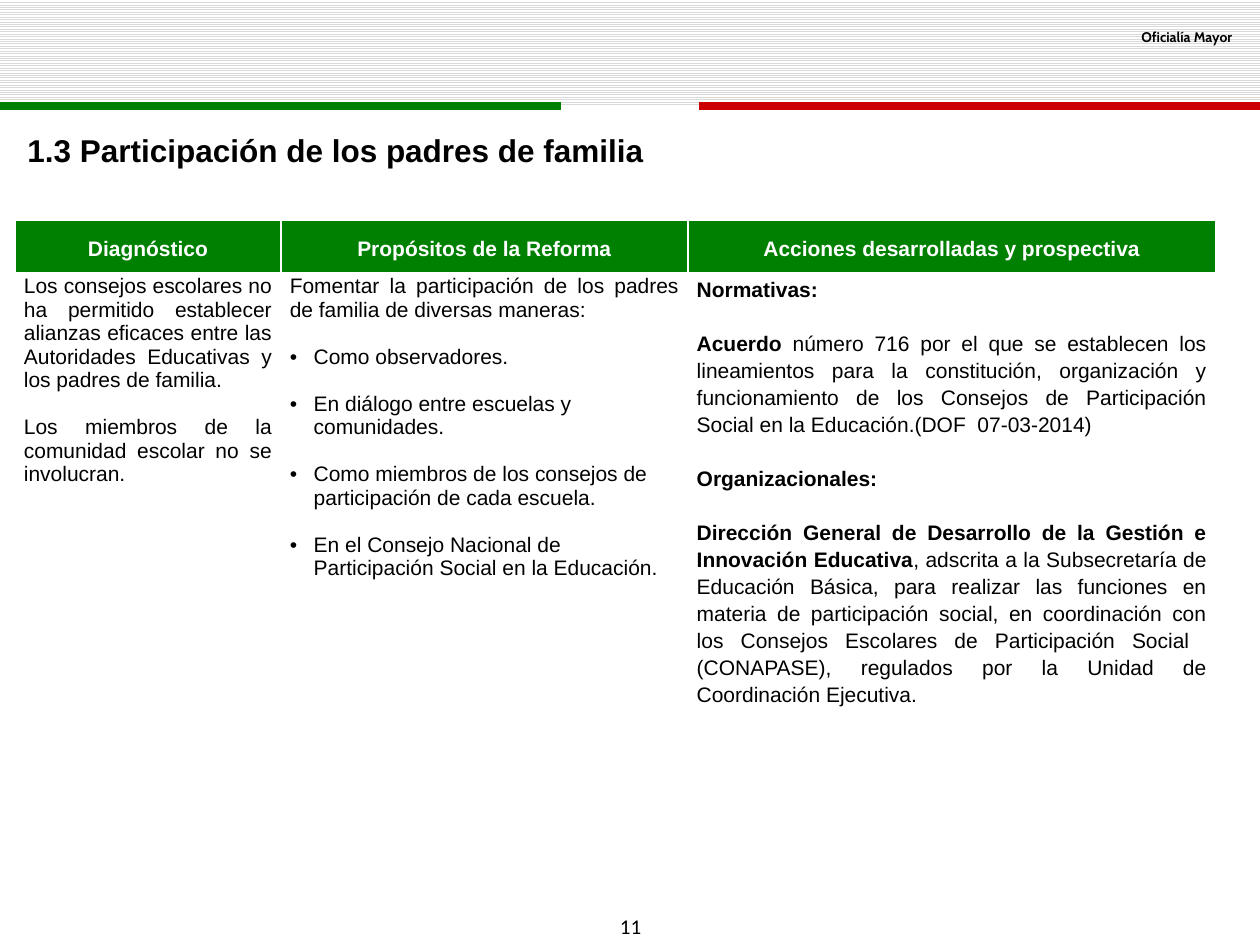
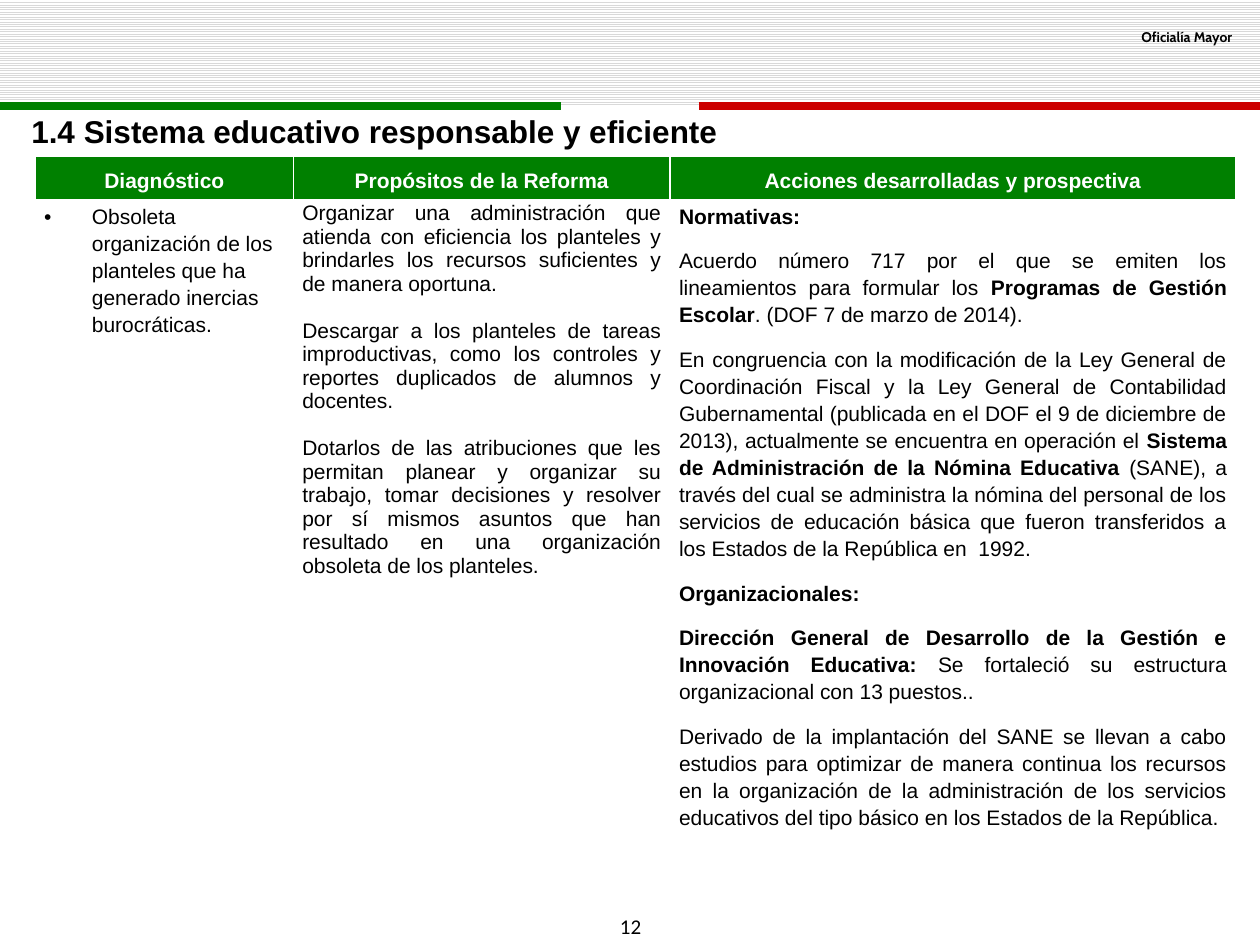
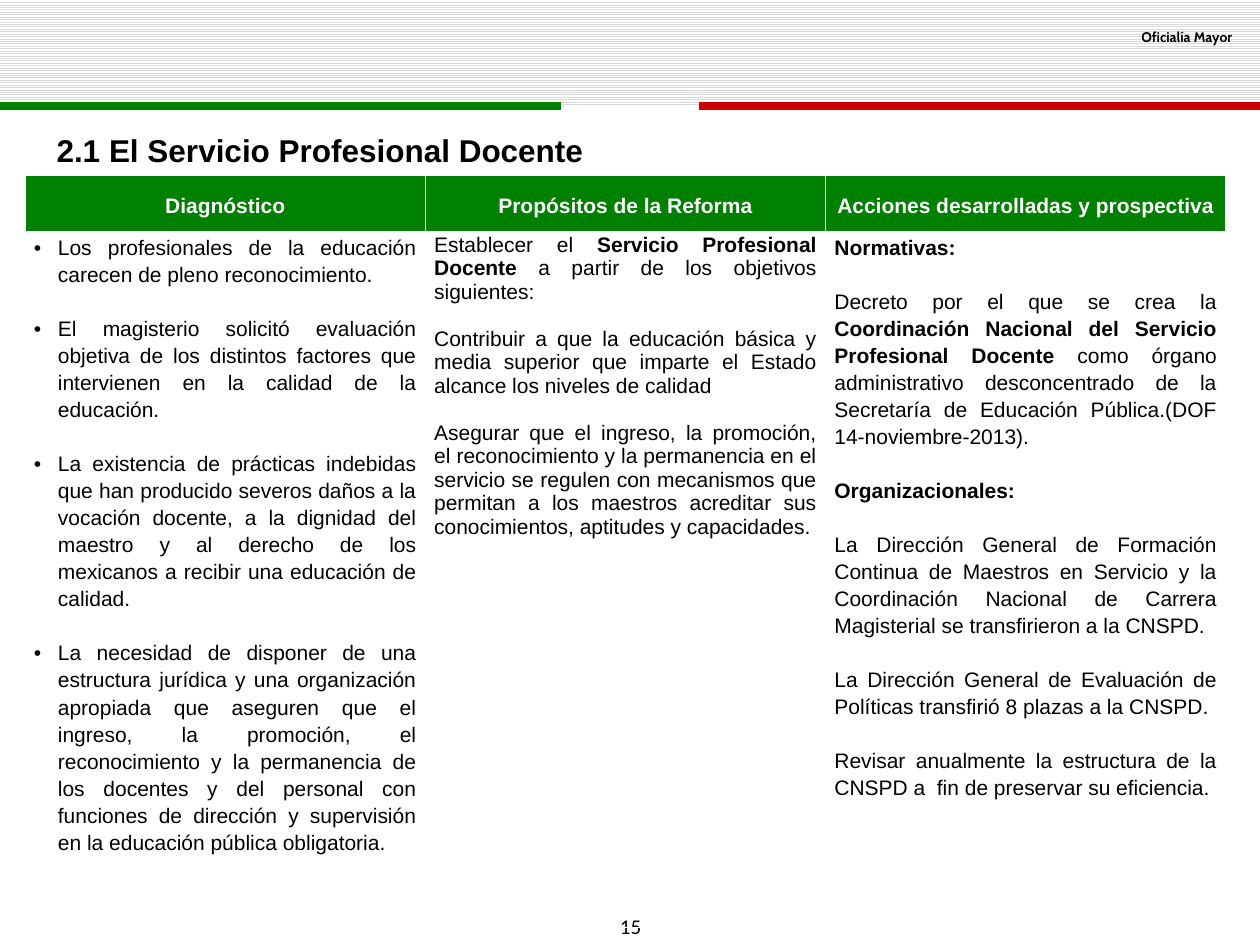
from lxml.etree import SubElement
from pptx import Presentation
from pptx.dml.color import RGBColor
from pptx.enum.dml import MSO_PATTERN
from pptx.enum.shapes import MSO_CONNECTOR, MSO_SHAPE
from pptx.enum.text import MSO_ANCHOR, MSO_AUTO_SIZE, PP_ALIGN
from pptx.oxml.ns import qn
from pptx.util import Inches, Pt

GREEN = RGBColor(0x00, 0x80, 0x00)
RED = RGBColor(0xCC, 0x00, 0x00)
GRAY = RGBColor(0xD9, 0xD9, 0xD9)
WHITE = RGBColor(0xFF, 0xFF, 0xFF)
BLACK = RGBColor(0x00, 0x00, 0x00)

SLIDE_WIDTH, SLIDE_HEIGHT = 10, 7.5
BAND_HEIGHT = 0.84
STRIPE_WIDTH = 4.45
TABLE_WIDTH = 9.53
CELL_MARGIN = 0.07
WIDE = 1.15  # line spacing of the looser columns
LINE = 13.4  # points taken by one single-spaced line of body text

HEADINGS = ["Diagnóstico", "Propósitos de la Reforma", "Acciones desarrolladas y prospectiva"]

# Body text: "• " starts a bulleted paragraph and ** encloses bold words.
# Each column gives its line spacing and paragraphs, and any exceptions:
# "gap" in points between paragraphs, "bullet_align" for its bullets.
SLIDES = [
    {
        "number": 11,
        "title": "1.3 Participación de los padres de familia",
        "title_box": (0.12, 0.99, 7.56),
        "table_at": (0.12, 1.75),
        "column_shares": (2.11, 3.23, 4.19),
        "row_heights": (0.43, 4.12),
        "indent": 0.19,
        "columns": [
            {"spacing": 1, "paragraphs": [
                "Los consejos escolares no ha permitido establecer alianzas eficaces entre las "
                "Autoridades Educativas y los padres de familia.",
                "Los miembros de la comunidad escolar no se involucran.",
            ]},
            {"spacing": 1, "paragraphs": [
                "Fomentar la participación de los padres de familia de diversas maneras:",
                "• Como observadores.",
                "• En diálogo entre escuelas y comunidades.",
                "• Como miembros de los consejos de participación de cada escuela.",
                "• En el Consejo Nacional de Participación Social en la Educación.",
            ]},
            {"spacing": WIDE, "paragraphs": [
                "**Normativas:**",
                "**Acuerdo** número 716 por el que se establecen los lineamientos para la "
                "constitución, organización y funcionamiento de los Consejos de Participación "
                "Social en la Educación.(DOF  07-03-2014)",
                "**Organizacionales:**",
                "**Dirección General de Desarrollo de la Gestión e Innovación Educativa**, "
                "adscrita a la Subsecretaría de Educación Básica, para realizar las funciones en "
                "materia de participación social, en coordinación con los Consejos Escolares de "
                "Participación Social  (CONAPASE), regulados por la Unidad de Coordinación "
                "Ejecutiva.",
            ]},
        ],
    },
    {
        "number": 12,
        "title": "1.4 Sistema educativo responsable y eficiente",
        "title_box": (0.15, 0.84, 5.7),
        "table_at": (0.28, 1.24),
        "column_shares": (2.05, 2.99, 4.49),
        "row_heights": (0.36, 5.28),
        "indent": 0.38,
        "columns": [
            {"spacing": WIDE, "paragraphs": [
                "• Obsoleta organización de los planteles que ha generado inercias burocráticas.",
            ]},
            {"spacing": 1, "paragraphs": [
                "Organizar una administración que atienda con eficiencia los planteles y "
                "brindarles los recursos suficientes y de manera oportuna.",
                "Descargar a los planteles de tareas improductivas, como los controles y reportes "
                "duplicados de alumnos y docentes.",
                "Dotarlos de las atribuciones que les permitan planear y organizar su trabajo, "
                "tomar decisiones y resolver por sí mismos asuntos que han resultado en una "
                "organización obsoleta de los planteles.",
            ]},
            {"spacing": WIDE, "gap": 10, "paragraphs": [
                "**Normativas:**",
                "Acuerdo número 717 por el que se emiten los lineamientos para formular los "
                "**Programas de Gestión Escolar**. (DOF 7 de marzo de 2014).",
                "En congruencia con la modificación de la Ley General de Coordinación Fiscal y la "
                "Ley General de Contabilidad Gubernamental (publicada en el DOF el 9 de diciembre "
                "de 2013), actualmente se encuentra en operación el **Sistema de Administración "
                "de la Nómina Educativa** (SANE), a través del cual se administra la nómina del "
                "personal de los servicios de educación básica que fueron transferidos a los "
                "Estados de la República en  1992.",
                "**Organizacionales:**",
                "**Dirección General de Desarrollo de la Gestión e Innovación Educativa: **"
                "Se fortaleció su estructura organizacional con 13 puestos..",
                "Derivado de la implantación del SANE se llevan a cabo estudios para optimizar de "
                "manera continua los recursos en la organización de la administración de los "
                "servicios educativos del tipo básico en los Estados de la República.",
            ]},
        ],
    },
    {
        "number": 15,
        "title": "2.1 El Servicio Profesional Docente",
        "title_box": (0.35, 0.99, 4.42),
        "table_at": (0.2, 1.39),
        "column_shares": (1, 1, 1),
        "row_heights": (0.46, 5.51),
        "indent": 0.19,
        "columns": [
            {"spacing": WIDE, "bullet_align": PP_ALIGN.JUSTIFY, "paragraphs": [
                "• Los profesionales de la educación carecen de pleno reconocimiento.",
                "• El magisterio solicitó evaluación objetiva de los distintos factores que "
                "intervienen en la calidad de la educación.",
                "• La existencia de prácticas indebidas que han producido severos daños a la "
                "vocación docente, a la dignidad del maestro y al derecho de los mexicanos a "
                "recibir una educación de calidad.",
                "• La necesidad de disponer de una estructura jurídica y una organización "
                "apropiada que aseguren que el ingreso, la promoción, el reconocimiento y la "
                "permanencia de los docentes y del personal con funciones de dirección y "
                "supervisión en la educación pública obligatoria.",
            ]},
            {"spacing": 1, "paragraphs": [
                "Establecer el **Servicio Profesional Docente** a partir de los objetivos "
                "siguientes:",
                "Contribuir a que la educación básica y media superior que imparte el Estado "
                "alcance los niveles de calidad",
                "Asegurar que el ingreso, la promoción, el reconocimiento y la permanencia en el "
                "servicio se regulen con mecanismos que permitan a los maestros acreditar sus "
                "conocimientos, aptitudes y capacidades.",
            ]},
            {"spacing": WIDE, "paragraphs": [
                "**Normativas:**",
                "Decreto por el que se crea la **Coordinación Nacional del Servicio Profesional "
                "Docente** como órgano administrativo desconcentrado de la Secretaría de "
                "Educación Pública.(DOF 14-noviembre-2013).",
                "**Organizacionales:**",
                "La Dirección General de Formación Continua de Maestros en Servicio y la "
                "Coordinación Nacional de Carrera Magisterial se transfirieron a la CNSPD.",
                "La Dirección General de Evaluación de Políticas transfirió 8 plazas a la CNSPD.",
                "Revisar anualmente la estructura de la CNSPD a  fin de preservar su eficiencia.",
            ]},
        ],
    },
]


# Text helpers
def format_run(run, size, color=BLACK, bold=False, name="Arial"):
    run.font.name = name
    run.font.size = Pt(size)
    run.font.bold = bold
    run.font.color.rgb = color


def add_label(slide, box, text, size, align=PP_ALIGN.LEFT, bold=True, name="Arial"):
    shape = slide.shapes.add_textbox(*[Inches(length) for length in box])
    text_frame = shape.text_frame
    text_frame.word_wrap = True
    text_frame.auto_size = MSO_AUTO_SIZE.SHAPE_TO_FIT_TEXT
    text_frame.text = text
    paragraph = text_frame.paragraphs[0]
    paragraph.alignment = align
    format_run(paragraph.runs[0], size, bold=bold, name=name)
    return shape


def add_bullet(paragraph, indent):
    properties = paragraph._p.get_or_add_pPr()
    properties.set("marL", str(Inches(indent)))
    properties.set("indent", str(-Inches(indent)))
    SubElement(properties, qn("a:buFont"), typeface="Arial")
    SubElement(properties, qn("a:buChar"), char="•")


# Header band, flag stripes and page number
def add_stripe(slide, left, color):
    stripe = slide.shapes.add_connector(
        MSO_CONNECTOR.STRAIGHT, Inches(left), Inches(BAND_HEIGHT),
        Inches(left + STRIPE_WIDTH), Inches(BAND_HEIGHT))
    stripe.line.color.rgb = color
    stripe.line.width = Pt(4.5)
    SubElement(stripe._element.spPr, qn("a:effectLst"))


def add_frame(slide, number):
    band = slide.shapes.add_shape(
        MSO_SHAPE.RECTANGLE, 0, 0, Inches(SLIDE_WIDTH), Inches(BAND_HEIGHT))
    band.shadow.inherit = False
    band.line.fill.background()
    band.fill.patterned()
    band.fill.pattern = MSO_PATTERN.LIGHT_HORIZONTAL
    band.fill.fore_color.rgb = GRAY
    band.fill.back_color.rgb = WHITE
    add_stripe(slide, SLIDE_WIDTH - STRIPE_WIDTH, RED)
    add_stripe(slide, 0, GREEN)
    add_label(slide, (7.52, 0.18, 2.36, 0.24), "Oficialía Mayor", 8, PP_ALIGN.RIGHT, name="Cabin")
    page = add_label(slide, (4.69, SLIDE_HEIGHT - 0.3, 0.63, 0.3), str(number), 12,
                     PP_ALIGN.CENTER, bold=False, name="Calibri")
    page.text_frame.vertical_anchor = MSO_ANCHOR.MIDDLE


# Table
def prepare_cell(cell, bottom_width):
    cell.margin_left = cell.margin_right = Inches(CELL_MARGIN)
    cell.margin_top = cell.margin_bottom = 0
    properties = cell._tc.get_or_add_tcPr()
    for side, width in (("L", 1), ("R", 1), ("T", 1), ("B", bottom_width)):
        border = SubElement(properties, qn(f"a:ln{side}"), w=str(Pt(width)))
        fill = SubElement(border, qn("a:solidFill"))
        SubElement(fill, qn("a:srgbClr"), val=str(WHITE))


def fill_heading(cell, heading):
    prepare_cell(cell, bottom_width=3)
    cell.fill.solid()
    cell.fill.fore_color.rgb = GREEN
    cell.vertical_anchor = MSO_ANCHOR.MIDDLE
    cell.text_frame.text = heading
    paragraph = cell.text_frame.paragraphs[0]
    paragraph.alignment = PP_ALIGN.CENTER
    paragraph.line_spacing = WIDE
    paragraph.space_after = Pt(10)
    format_run(paragraph.runs[0], 12, WHITE, bold=True)


def fill_body(cell, column, indent):
    prepare_cell(cell, bottom_width=1)
    cell.fill.background()
    gap = column.get("gap", LINE * column["spacing"])
    for index, text in enumerate(column["paragraphs"]):
        text_frame = cell.text_frame
        paragraph = text_frame.add_paragraph() if index else text_frame.paragraphs[0]
        paragraph.alignment = PP_ALIGN.JUSTIFY
        paragraph.line_spacing = column["spacing"]
        if index:
            paragraph.space_before = Pt(gap)
        if text.startswith("• "):
            text = text.removeprefix("• ")
            paragraph.alignment = column.get("bullet_align", PP_ALIGN.LEFT)
            add_bullet(paragraph, indent)
        for part, words in enumerate(text.split("**")):
            if words:
                run = paragraph.add_run()
                run.text = words
                format_run(run, 12, bold=part % 2 == 1)


def add_reform_table(slide, content):
    left, top = content["table_at"]
    heights, shares = content["row_heights"], content["column_shares"]
    table = slide.shapes.add_table(
        len(heights), len(HEADINGS), Inches(left), Inches(top),
        Inches(TABLE_WIDTH), Inches(sum(heights))).table
    table.first_row = table.horz_banding = False
    for row, height in zip(table.rows, heights):
        row.height = Inches(height)
    for index, share in enumerate(shares):
        table.columns[index].width = Inches(TABLE_WIDTH * share / sum(shares))
        fill_heading(table.cell(0, index), HEADINGS[index])
        fill_body(table.cell(1, index), content["columns"][index], content["indent"])


def main():
    presentation = Presentation()
    presentation.slide_width = Inches(SLIDE_WIDTH)
    presentation.slide_height = Inches(SLIDE_HEIGHT)
    for content in SLIDES:
        slide = presentation.slides.add_slide(presentation.slide_layouts[6])
        add_frame(slide, content["number"])
        add_label(slide, (*content["title_box"], 0.4), content["title"], 18)
        add_reform_table(slide, content)
    presentation.save("out.pptx")


if __name__ == "__main__":
    main()
